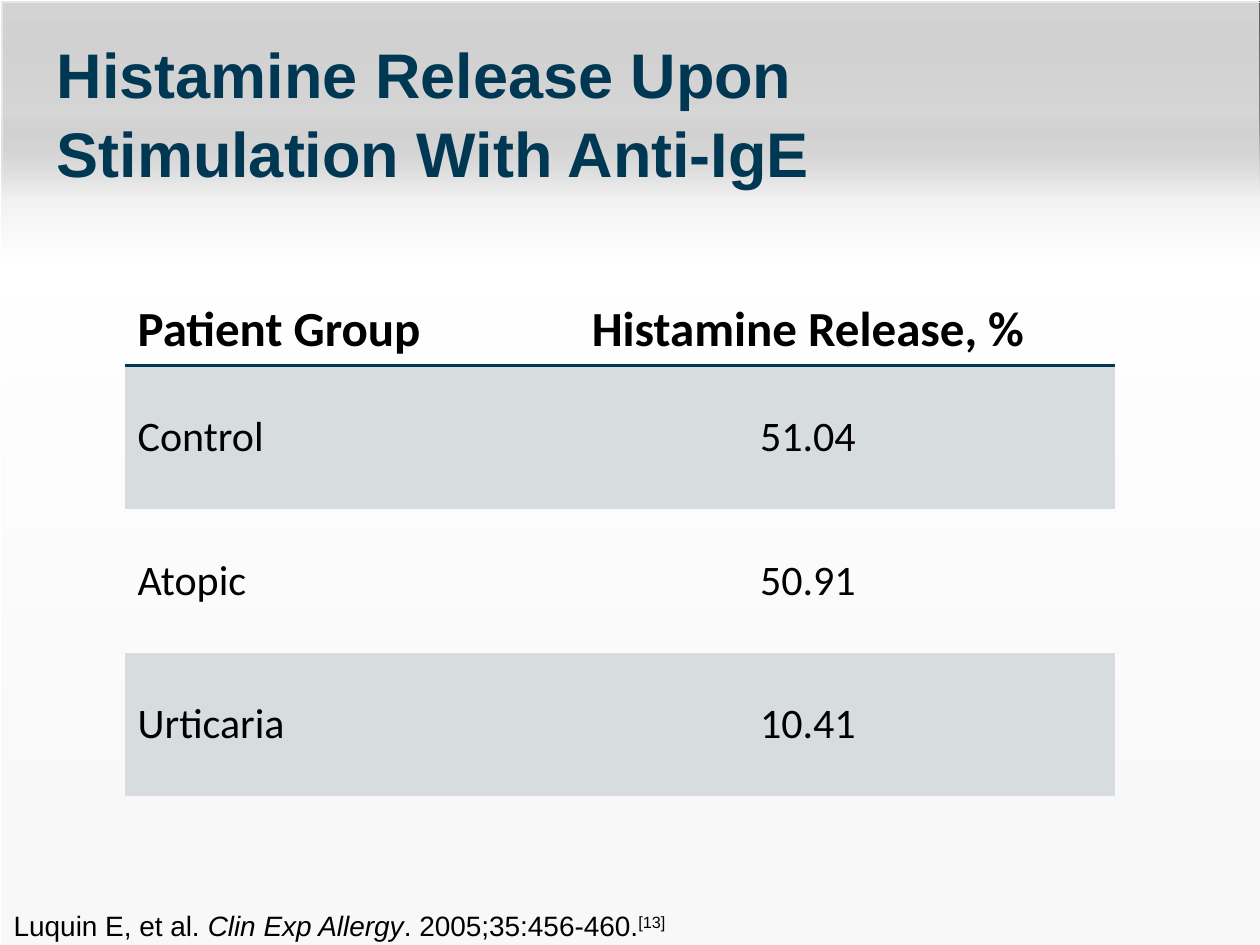
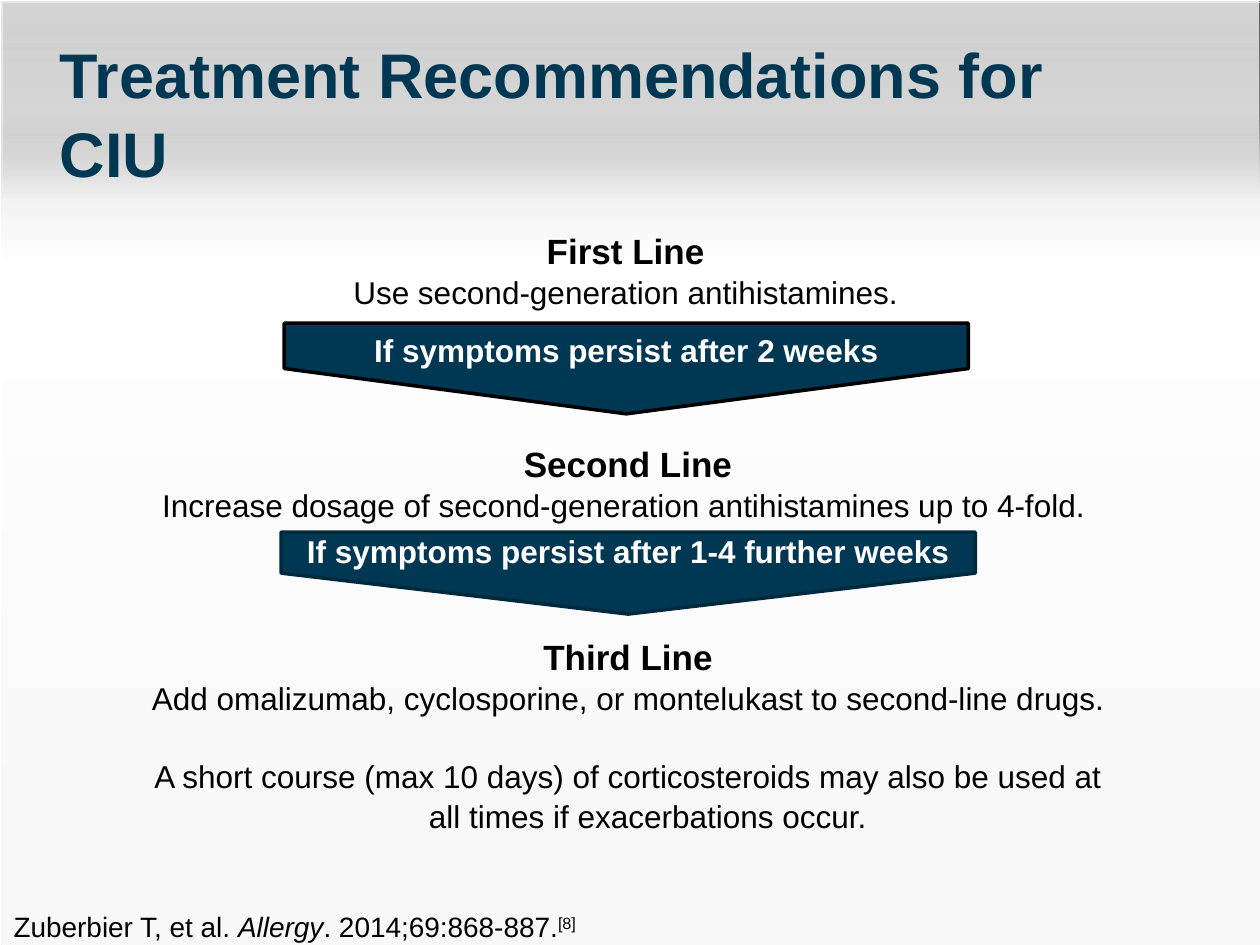
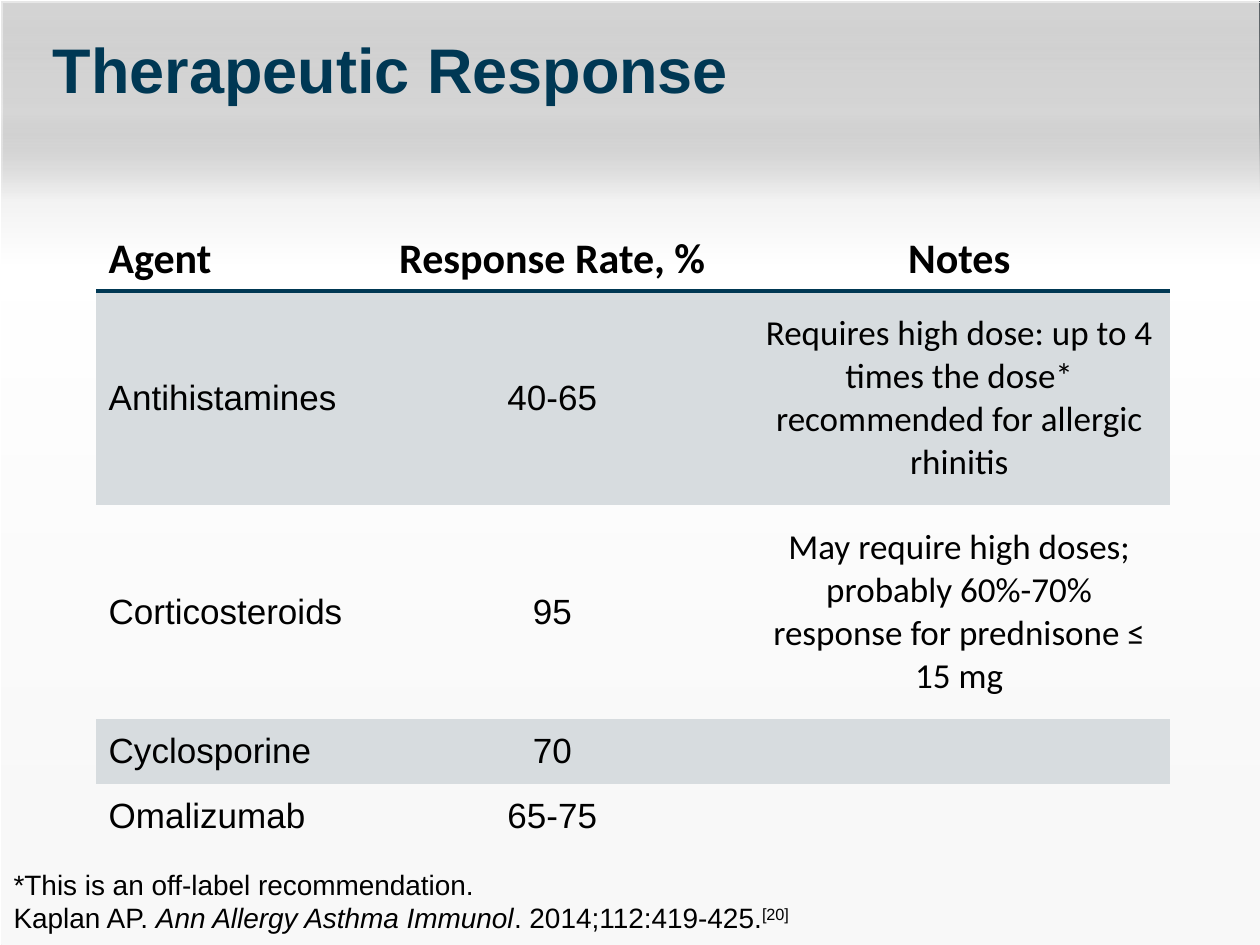
from lxml.etree import SubElement
from pptx import Presentation
from pptx.dml.color import RGBColor
from pptx.enum.shapes import MSO_SHAPE
from pptx.enum.text import MSO_ANCHOR, MSO_AUTO_SIZE, PP_ALIGN
from pptx.oxml import parse_xml
from pptx.oxml.ns import nsdecls, qn
from pptx.util import Pt

NAVY, BLACK, WHITE, BAND = "003854", "000000", "FFFFFF", "D7DCDF"
FRAME, DARK_NAVY = "444E54", "00293E"
WIDTH, HEIGHT = 720, 540
GLOW = [(0, "808080", 18), (12, "B3B3B3", 31), (21, "F2F2F2", 100),
        (28, "FFFFFF", 100), (85, "F8F8F8", 100)]
NO_STYLE = "{2D5ABB26-0587-4C30-8999-92F81FD0307C}"
LEFT, CENTER = PP_ALIGN.LEFT, PP_ALIGN.CENTER
TOP, MIDDLE, BOTTOM = MSO_ANCHOR.TOP, MSO_ANCHOR.MIDDLE, MSO_ANCHOR.BOTTOM


def rgb(color):
    """Turn a hex string into a colour."""
    return RGBColor.from_string(color)


def points(box):
    """Turn a box of numbers into lengths."""
    return [Pt(v) for v in box]


def add_run(p, text, size, color=BLACK, bold=False, italic=False, font="Arial", raised=False):
    """Add one formatted run to a paragraph."""
    r = p.add_run()
    r.text = text
    r.font.name, r.font.size = font, Pt(size)
    r.font.bold, r.font.italic = bold, italic
    r.font.color.rgb = rgb(color)
    if raised:
        r.font._element.set("baseline", "30000")


def add_box(s, box, anchor=MIDDLE):
    """Add a wrapping text box and return its text frame."""
    tf = s.shapes.add_textbox(*points(box)).text_frame
    tf.word_wrap = True
    tf.vertical_anchor = anchor
    return tf


def add_outlined(s, kind, box, line, width, rotation=0):
    """Add a flat preset shape with an outline and no fill."""
    sp = s.shapes.add_shape(kind, *points(box))
    sp.shadow.inherit = False
    sp.rotation = rotation
    sp.fill.background()
    sp.line.color.rgb = rgb(line)
    sp.line.width = Pt(width)
    return sp


def fill_glow(sp):
    """Fill a shape with the translucent grey header gradient."""
    sp.fill.gradient()
    sp.fill.gradient_angle = 90
    stops = sp.element.spPr.find(qn("a:gradFill")).find(qn("a:gsLst"))
    for stop in list(stops):
        stops.remove(stop)
    for position, color, opacity in GLOW:
        stop = SubElement(stops, qn("a:gs"), pos=str(position * 1000))
        tint = SubElement(stop, qn("a:srgbClr"), val=color)
        SubElement(tint, qn("a:alpha"), val=str(opacity * 1000))


def build_background(s, layout):
    """Draw the frame and gradient layers and move them to the layout."""
    layers = [add_outlined(s, MSO_SHAPE.RECTANGLE, (0, 0, WIDTH, HEIGHT), FRAME, 1.5)]
    for shift in (1.5, 0):
        glow = add_outlined(s, MSO_SHAPE.RECTANGLE, (shift, shift, WIDTH, HEIGHT), WHITE, 0.25, 180)
        fill_glow(glow)
        layers.append(glow)
    for i, sp in enumerate(layers):
        sp.element.xpath(".//p:cNvPr")[0].set("id", str(100 + i))
        layout.shapes.element.insert(2 + i, sp.element)


def set_title(s, text, box, anchor=TOP, spacing=1.05):
    """Place and format the slide title."""
    title = s.shapes.title
    title.left, title.top, title.width, title.height = points(box)
    tf = title.text_frame
    tf.auto_size = MSO_AUTO_SIZE.NONE
    tf.word_wrap = True
    tf.vertical_anchor = anchor
    p = tf.paragraphs[0]
    p.alignment, p.line_spacing = LEFT, spacing
    add_run(p, text, 36, NAVY, bold=True)


def add_citation(s, box, authors, journal, issue, number, note=None):
    """Add the source line at the foot, below an optional note."""
    tf = add_box(s, box)
    p = tf.paragraphs[0]
    if note:
        add_run(p, note, 16)
        p = tf.add_paragraph()
    add_run(p, authors, 16)
    add_run(p, journal, 16, italic=True)
    add_run(p, issue, 16)
    add_run(p, number, 16, raised=True)


def underline_cell(cell):
    """Draw the rule below a header cell."""
    cell._tc.get_or_add_tcPr().insert(0, parse_xml(
        f'<a:lnB {nsdecls("a")} w="{Pt(2.25)}"><a:solidFill>'
        f'<a:srgbClr val="{NAVY}"/></a:solidFill></a:lnB>'))


def add_data_table(s, left, top, widths, heights, rows, head_size, size, fonts):
    """Add a banded table with a ruled header and one body font per column."""
    box = (left, top, sum(widths), sum(heights))
    table = s.shapes.add_table(len(rows), len(widths), *points(box)).table
    table.first_row = table.horz_banding = False
    table._tbl.tblPr.find(qn("a:tableStyleId")).text = NO_STYLE
    for column, width in zip(table.columns, widths):
        column.width = Pt(width)
    for i, (row, height) in enumerate(zip(rows, heights)):
        table.rows[i].height = Pt(height)
        for j, text in enumerate(row):
            cell = table.cell(i, j)
            if i % 2:
                cell.fill.solid()
                cell.fill.fore_color.rgb = rgb(BAND)
            else:
                cell.fill.background()
            cell.vertical_anchor = MIDDLE if i else BOTTOM
            if i == 0:
                underline_cell(cell)
            if text:
                p = cell.text_frame.paragraphs[0]
                p.alignment = CENTER if j else LEFT
                add_run(p, text, size if i else head_size, bold=i == 0,
                        font=fonts[j] if i else "Calibri")


def add_step(s, box, heading, lines):
    """Add a treatment step: a bold heading above centred lines."""
    tf = add_box(s, box)
    for i, text in enumerate([heading, *lines]):
        p = tf.add_paragraph() if i else tf.paragraphs[0]
        p.alignment, p.line_spacing = CENTER, 1.05
        if i > 1:
            p.space_before = Pt(21.7)
        pPr = p._p.get_or_add_pPr()
        pPr.set("marL", str(Pt(22.5)))
        pPr.set("indent", str(Pt(-22.5)))
        add_run(p, text, 18 if i else 20, bold=i == 0)


def add_down_arrow(s, box, text, line, lift):
    """Add a downward pentagon in the box, with its label raised by lift."""
    left, top, width, height = box
    turned = (left + (width - height) / 2, top + (height - width) / 2, height, width)
    sp = add_outlined(s, MSO_SHAPE.PENTAGON, turned, line, 2, 90)
    sp.fill.solid()
    sp.fill.fore_color.rgb = rgb(NAVY)
    p = add_box(s, (left, top - lift, width, 31.7)).paragraphs[0]
    p.alignment = CENTER
    add_run(p, text, 18, WHITE, bold=True)


def build_histamine(s):
    """Build the histamine release slide."""
    set_title(s, "Histamine Release Upon Stimulation With Anti-IgE", (25.2, 14.4, 628.6, 94.3))
    add_citation(s, (0.7, 515.5, 408, 26.6), "Luquin E, et al. ", "Clin Exp Allergy",
                 ". 2005;35:456-460.", "[13]")
    rows = [("Patient Group", "Histamine Release, %"), ("Control", "51.04"),
            ("Atopic", "50.91"), ("Urticaria", "10.41")]
    add_data_table(s, 71.5, 157.7, (214.5, 351.3), (51.3, 82, 82, 82), rows, 28, 24,
                   ("Calibri", "Calibri"))


def build_treatment(s):
    """Build the treatment recommendations slide."""
    set_title(s, "Treatment Recommendations for CIU", (26.9, 14.4, 644.4, 98.6))
    add_citation(s, (0.7, 516.2, 374.4, 26.6), "Zuberbier T, et al. ", "Allergy",
                 ". 2014;69:868-887.", "[8]")
    add_step(s, (72, 124.6, 571, 58.3), "First Line", ["Use second-generation antihistamines."])
    add_step(s, (73.4, 246.2, 571, 58.3), "Second Line",
             ["Increase dosage of second-generation antihistamines up to 4-fold. "])
    add_step(s, (73.4, 354.2, 571, 130.3), "Third Line",
             ["Add omalizumab, cyclosporine, or montelukast to second-line drugs.",
              "A short course (max 10 days) of corticosteroids may also be used at "
              "all times if exacerbations occur."])
    add_down_arrow(s, (162.4, 184.7, 391, 51.8), "If symptoms persist after 2 weeks", BLACK, 0.4)
    add_down_arrow(s, (160.6, 304.1, 396.7, 46.8),
                   "If symptoms persist after 1-4 further weeks", DARK_NAVY, 5.3)


def build_response(s):
    """Build the therapeutic response slide."""
    set_title(s, "Therapeutic Response", (23, 11.5, 401.8, 60.5), MIDDLE, 0.9)
    add_citation(s, (0.7, 491.8, 657.4, 46.1), "Kaplan AP. ", "Ann Allergy Asthma Immunol",
                 ". 2014;112:419-425.", "[20]", "*This is an off-label recommendation.")
    rows = [("Agent", "Response Rate, %", "Notes"),
            ("Antihistamines", "40-65",
             "Requires high dose: up to 4 times the dose* recommended for allergic rhinitis"),
            ("Corticosteroids", "95",
             "May require high doses; probably 60%-70% response for prednisone ≤ 15 mg"),
            ("Cyclosporine", "70", ""), ("Omalizumab", "65-75", "")]
    add_data_table(s, 54.9, 123.8, (148.4, 224.6, 240.5), (42.5, 122.4, 122.4, 37, 37), rows,
                   24, 20, ("Arial", "Arial", "Calibri"))


def main():
    """Build and save the deck."""
    prs = Presentation()
    prs.slide_width, prs.slide_height = Pt(WIDTH), Pt(HEIGHT)
    layout = prs.slide_layouts[5]
    slides = [prs.slides.add_slide(layout) for _ in range(3)]
    build_background(slides[0], layout)
    for build, s in zip((build_histamine, build_treatment, build_response), slides):
        build(s)
    prs.save("out.pptx")


if __name__ == "__main__":
    main()
